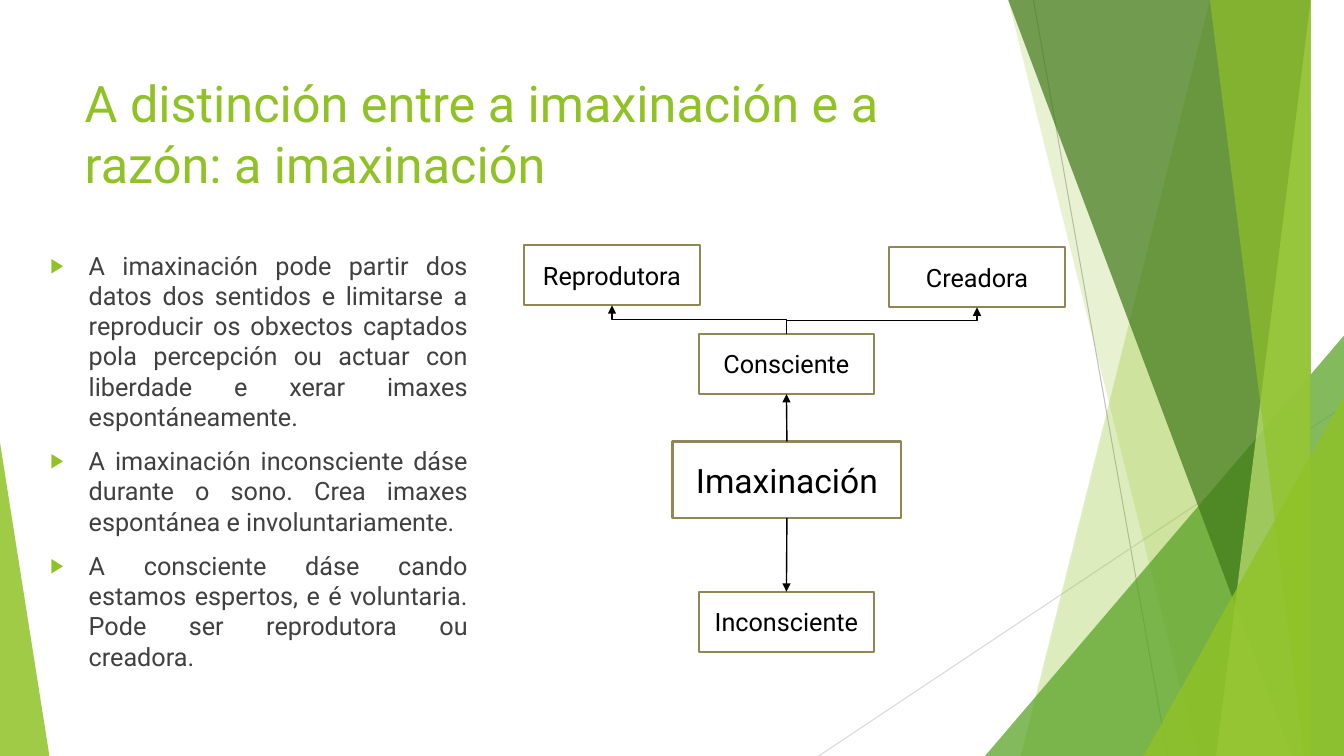
from lxml import etree
from pptx import Presentation
from pptx.dml.color import RGBColor
from pptx.enum.shapes import MSO_CONNECTOR, MSO_SHAPE
from pptx.enum.text import MSO_ANCHOR, MSO_AUTO_SIZE, PP_ALIGN
from pptx.oxml.ns import qn
from pptx.util import Inches, Pt

STRAIGHT, ELBOW = MSO_CONNECTOR.STRAIGHT, MSO_CONNECTOR.ELBOW
RECTANGLE, TRIANGLE = MSO_SHAPE.RECTANGLE, MSO_SHAPE.ISOSCELES_TRIANGLE
LEFT, CENTER, JUSTIFY = PP_ALIGN.LEFT, PP_ALIGN.CENTER, PP_ALIGN.JUSTIFY
TOP, MIDDLE = MSO_ANCHOR.TOP, MSO_ANCHOR.MIDDLE
TOP_SIDE, BOTTOM_SIDE = 0, 2
GREEN = "90C226"


def paint(color_format, color, opacity=100):
    """Set a hex colour, with an opacity in percent."""
    color_format.rgb = RGBColor.from_string(color)
    if opacity < 100:
        color_element = color_format._xFill.find(qn("a:srgbClr"))
        etree.SubElement(color_element, qn("a:alpha"), val=str(opacity * 1000))


def write(shape, texts, size, color, alignment, anchor):
    frame = shape.text_frame
    frame.text = "\n".join(texts)
    frame_format = {"word_wrap": True, "auto_size": MSO_AUTO_SIZE.NONE, "vertical_anchor": anchor}
    for name, value in frame_format.items():
        setattr(frame, name, value)
    for paragraph in frame.paragraphs:
        paragraph.alignment = alignment
        font = paragraph.runs[0].font
        font.name, font.size = "Roboto", Pt(size)
        paint(font.color, color)


presentation = Presentation()
presentation.slide_width, presentation.slide_height = Inches(13.33), Inches(7.5)
slide = presentation.slides.add_slide(presentation.slide_layouts[1])
shapes = slide.shapes
title, body = slide.placeholders

# Background lines, from back to front
connectors = []
for start, end, color in [
    ((10.25, 0), (11.58, 7.5), "BFBFBF"),
    ((13.33, 4.03), (8.12, 7.5), "D9D9D9"),
]:
    line = shapes.add_connector(STRAIGHT, *map(Inches, start + end))
    line.line.width = Pt(0.75)
    paint(line.line.color, color)
    connectors.append(line)

# Bands run from a top left x to a bottom left x and fill up to the right edge;
# triangles have left, top, width and the place of the tip
for kind, values, color, opacity in [
    ("band", (12.28, 10.04), GREEN, 30),
    ("band", (10.5, 11.83), GREEN, 20),
    ("triangle", (9.77, 3.33, 3.56, 1), "54A021", 72),
    ("band", (10.21, 12.91), "3F7819", 70),
    ("band", (13.03, 11.92), "C0E474", 70),
    ("band", (11.96, 13.18), GREEN, 65),
    ("triangle", (11.34, 3.93, 1.99, 1), GREEN, 80),
    ("triangle", (0, 4.39, 0.49, 0), GREEN, 85),
]:
    if kind == "band":
        top_x, bottom_x = values
        builder = shapes.build_freeform(top_x, 0, scale=Inches(1))
        builder.add_line_segments([(13.33, 0), (13.33, 7.5), (bottom_x, 7.5)])
        facet = builder.convert_to_shape()
    else:
        left, top, width, tip = values
        facet = shapes.add_shape(TRIANGLE, *map(Inches, (left, top, width, 7.5 - top)))
        facet.adjustments[0] = tip
    facet.shadow.inherit = False
    facet.line.fill.background()
    facet.fill.solid()
    paint(facet.fill.fore_color, color, opacity)

# Title and list, in front of the background
for placeholder, box in [(title, (0.74, 0.67, 9.4, 1.44)), (body, (0.4, 2.43, 4.34, 4.76))]:
    for name, value in zip(("left", "top", "width", "height"), box):
        setattr(placeholder, name, Inches(value))
    shapes._spTree.append(placeholder._element)

write(title, ["A distinción entre a imaxinación e a razón: a imaxinación"], 36, GREEN, LEFT, TOP)
write(body, [
    "A imaxinación pode partir dos datos dos sentidos e limitarse a reproducir os obxectos "
    "captados pola percepción ou actuar con liberdade e xerar imaxes espontáneamente.",
    "A imaxinación inconsciente dáse durante o sono. Crea imaxes espontánea e involuntariamente.",
    "A consciente dáse cando estamos espertos, e é voluntaria. Pode ser reprodutora ou creadora.",
], 18, "404040", JUSTIFY, TOP)
for paragraph in body.text_frame.paragraphs:
    paragraph.space_before = Pt(10)
    properties = paragraph._p.get_or_add_pPr()
    properties.set("marL", str(Inches(0.38)))
    properties.set("indent", str(Inches(-0.38)))
    bullet_color = etree.SubElement(properties, qn("a:buClr"))
    etree.SubElement(bullet_color, qn("a:srgbClr"), val=GREEN)
    etree.SubElement(properties, qn("a:buSzPct"), val="80000")
    etree.SubElement(properties, qn("a:buChar"), char="▶")

# Diagram boxes
boxes = {}
for label, left, top, width, height, size in [
    ("Consciente", 6.93, 3.31, 1.74, 0.6, 18),
    ("Creadora", 8.82, 2.45, 1.74, 0.6, 18),
    ("Reprodutora", 5.2, 2.43, 1.74, 0.6, 18),
    ("Inconsciente", 6.93, 5.87, 1.74, 0.6, 18),
    ("Imaxinación", 6.67, 4.38, 2.27, 0.76, 24),
]:
    box = shapes.add_shape(RECTANGLE, *map(Inches, (left, top, width, height)))
    box.shadow.inherit = False
    box.fill.solid()
    paint(box.fill.fore_color, "FFFFFF")
    box.line.width = Pt(1.5)
    paint(box.line.color, "918655")
    write(box, [label], size, "000000", CENTER, MIDDLE)
    boxes[label] = box

# Diagram arrows
for source, source_side, target, target_side, kind in [
    ("Imaxinación", BOTTOM_SIDE, "Inconsciente", TOP_SIDE, STRAIGHT),
    ("Imaxinación", TOP_SIDE, "Consciente", BOTTOM_SIDE, STRAIGHT),
    ("Consciente", TOP_SIDE, "Reprodutora", BOTTOM_SIDE, ELBOW),
    ("Consciente", TOP_SIDE, "Creadora", BOTTOM_SIDE, ELBOW),
]:
    arrow = shapes.add_connector(kind, 0, 0, 0, 0)
    arrow.begin_connect(boxes[source], source_side)
    arrow.end_connect(boxes[target], target_side)
    arrow.line.width = Pt(1)
    paint(arrow.line.color, "000000")
    etree.SubElement(arrow.line._get_or_add_ln(), qn("a:tailEnd"), type="triangle")
    if kind == ELBOW:
        # A quarter turn makes the elbow leave the box upwards
        goes_left = arrow.end_x < arrow.begin_x
        center_x = (arrow.begin_x + arrow.end_x) // 2
        center_y = (arrow.begin_y + arrow.end_y) // 2
        width, height = arrow.height, arrow.width
        arrow.left, arrow.top = center_x - width // 2, center_y - height // 2
        arrow.width, arrow.height = width, height
        transform = arrow._element.spPr.find(qn("a:xfrm"))
        for name, value in {"rot": "16200000", "flipH": "0", "flipV": str(int(goes_left))}.items():
            transform.set(name, value)
    connectors.append(arrow)

for connector in connectors:
    etree.SubElement(connector._element.spPr, qn("a:effectLst"))

presentation.save("out.pptx")
